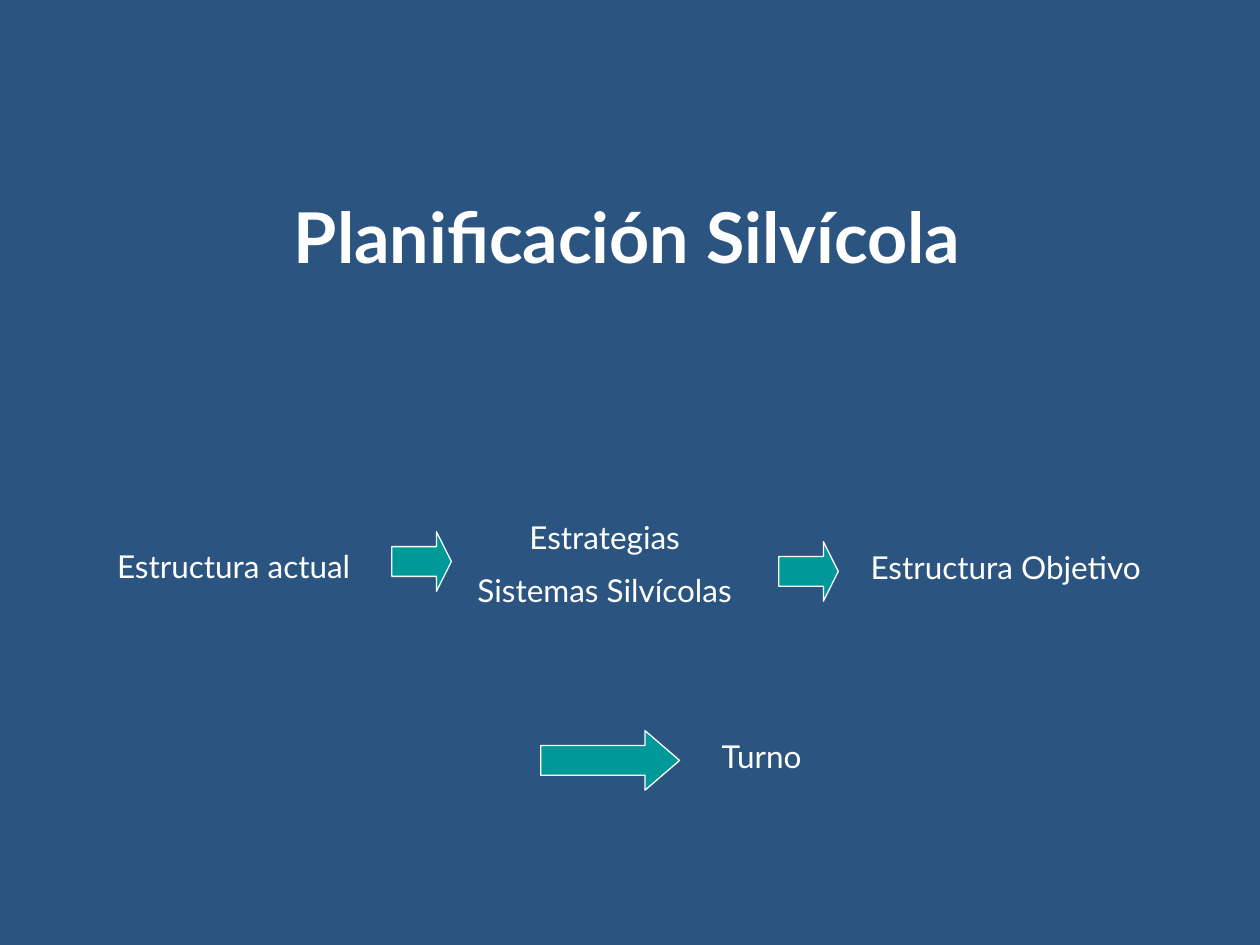
from dataclasses import dataclass

from pptx import Presentation
from pptx.dml.color import RGBColor
from pptx.enum.shapes import MSO_SHAPE as Shape
from pptx.enum.text import MSO_ANCHOR as Anchor, MSO_AUTO_SIZE as AutoSize, PP_ALIGN as Align
from pptx.util import Cm, Pt


@dataclass(frozen=True)
class Theme:
    """Colours, font and type sizes of the slide."""
    background: RGBColor = RGBColor(0x2B, 0x54, 0x81)
    ink: RGBColor = RGBColor(0xFF, 0xFF, 0xFF)
    accent: RGBColor = RGBColor(0x00, 0x99, 0x99)
    font: str = "Lato"
    title_size: int = 40
    label_size: int = 18
    label_gap: int = 9
    outline: float = 0.75


class SlideBuilder:
    """Adds styled elements to one slide."""

    def __init__(self, slide, theme):
        """Keep the slide and theme, and paint the background."""
        self.slide = slide
        self.theme = theme
        slide.background.fill.solid()
        slide.background.fill.fore_color.rgb = theme.background

    def style(self, paragraph, size, align, bold=False):
        """Format a paragraph and its runs."""
        paragraph.alignment = align
        for run in paragraph.runs:
            run.font.name = self.theme.font
            run.font.size = Pt(size)
            run.font.bold = bold
            run.font.color.rgb = self.theme.ink

    def title(self, text, left, top, width, height):
        """Fill and place the title placeholder."""
        heading = self.slide.shapes.title
        heading.left, heading.top = Cm(left), Cm(top)
        heading.width, heading.height = Cm(width), Cm(height)
        frame = heading.text_frame
        frame.text = text
        frame.auto_size = AutoSize.NONE
        frame.vertical_anchor = Anchor.MIDDLE
        self.style(frame.paragraphs[0], self.theme.title_size, Align.CENTER, bold=True)

    def label(self, text, left, top, width, height=1.02, align=Align.LEFT):
        """Add a label with one paragraph per line of text."""
        box = self.slide.shapes.add_textbox(Cm(left), Cm(top), Cm(width), Cm(height))
        frame = box.text_frame
        frame.text = text
        frame.word_wrap = True
        frame.auto_size = AutoSize.SHAPE_TO_FIT_TEXT
        for index, paragraph in enumerate(frame.paragraphs):
            self.style(paragraph, self.theme.label_size, align)
            if index:
                paragraph.space_before = Pt(self.theme.label_gap)

    def arrow(self, left, top, width=1.2, height=1.2, head=0.25):
        """Add a block arrow pointing right."""
        arrow = self.slide.shapes.add_shape(
            Shape.RIGHT_ARROW, Cm(left), Cm(top), Cm(width), Cm(height))
        arrow.adjustments[0] = 0.5
        arrow.adjustments[1] = head
        arrow.shadow.inherit = False
        arrow.fill.solid()
        arrow.fill.fore_color.rgb = self.theme.accent
        arrow.line.color.rgb = self.theme.ink
        arrow.line.width = Pt(self.theme.outline)


def main():
    """Build and save the slide."""
    deck = Presentation()
    deck.slide_width, deck.slide_height = Cm(25.4), Cm(19.05)
    builder = SlideBuilder(deck.slides.add_slide(deck.slide_layouts[5]), Theme())

    builder.title("Planificación Silvícola ", 2.97, 4.01, 19.69, 1.47)
    builder.label("Estructura actual", 2.11, 10.9, 5.38)
    builder.label("Estrategias\nSistemas Silvícolas", 9.09, 10.31, 6.2, 2.16, Align.CENTER)
    builder.label("Estructura Objetivo", 17.3, 10.92, 6.4)
    builder.arrow(7.9, 10.72)
    builder.arrow(15.7, 10.92)
    builder.arrow(10.9, 14.73, width=2.8, head=0.58)
    builder.label("Turno", 14.3, 14.73, 5.38)

    deck.save("out.pptx")


if __name__ == "__main__":
    main()
